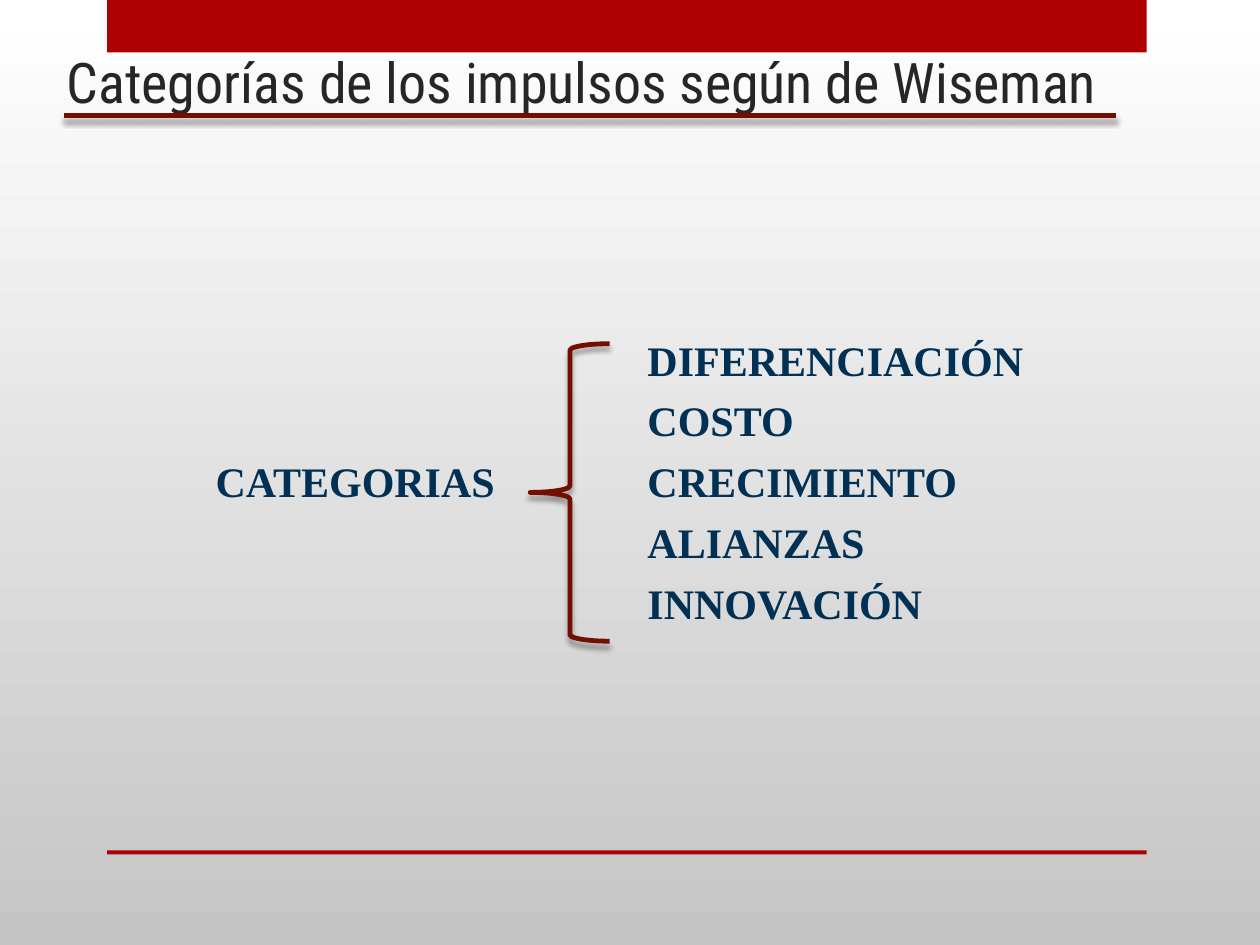
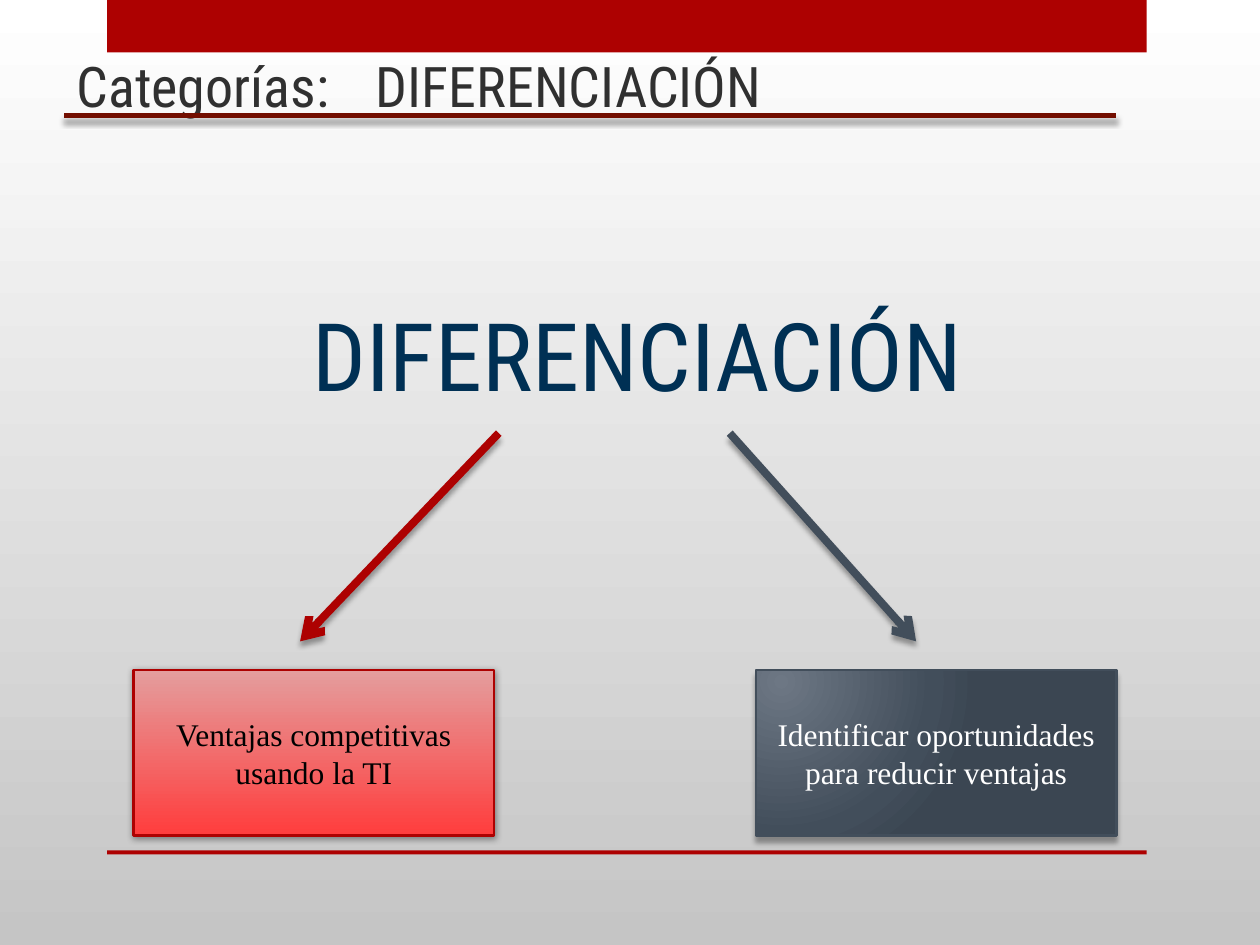
from dataclasses import dataclass

from lxml import etree
from pptx import Presentation
from pptx.dml.color import RGBColor
from pptx.enum.shapes import MSO_CONNECTOR, MSO_SHAPE
from pptx.enum.text import MSO_ANCHOR, PP_ALIGN
from pptx.oxml.ns import qn
from pptx.util import Pt

LINE = MSO_CONNECTOR.STRAIGHT
RECT = MSO_SHAPE.RECTANGLE
BRACE = MSO_SHAPE.LEFT_BRACE
LEFT, CENTER = PP_ALIGN.LEFT, PP_ALIGN.CENTER
MIDDLE, BOTTOM = MSO_ANCHOR.MIDDLE, MSO_ANCHOR.BOTTOM
PLAIN = "{2D5ABB26-0587-4C30-8999-92F81FD0307C}"


@dataclass(frozen=True)
class Theme:
    red: str = "AD0101"
    maroon: str = "730E00"
    navy: str = "003054"
    slate: str = "424E5B"
    ink: str = "262626"
    gray: str = "303030"
    black: str = "000000"
    white: str = "FFFFFF"
    paper: tuple = ((0, "FFFFFF"), (100, "C5C5C5"))
    rose: tuple = ((0, "E49D9D"), (100, "FF3D3D"))
    steel: tuple = ((0, "6D7784"), (76, "424E5B"), (100, "3B4652"))
    sans: str = "Roboto Condensed"
    serif: str = "Times New Roman"
    title: int = 32
    hero: int = 54
    item: int = 24
    body: int = 18
    thin: float = 1.25
    rule: float = 2.75
    thick: float = 4.5


T = Theme()


def pts(*sizes):
    return [Pt(size) for size in sizes]


def rgb(color):
    return RGBColor.from_string(color)


def add(parent, tag, **attrs):
    node = etree.SubElement(parent, qn(tag))
    for key, value in attrs.items():
        node.set(key, str(value))
    return node


def blend(fill, root, stops, round_=False):
    fill.gradient()
    grad = root.find(".//" + qn("a:gradFill"))
    for child in list(grad):
        grad.remove(child)
    group = add(grad, "a:gsLst")
    for place, color in stops:
        stop = add(group, "a:gs", pos=place * 1000)
        add(stop, "a:srgbClr", val=color)
    if round_:
        ring = add(grad, "a:path", path="circle")
        add(ring, "a:fillToRect", l=15000, t=15000, r=100000, b=100000)
    else:
        add(grad, "a:lin", ang=90 * 60000, scaled=0)


def shade(shape, alpha=35, blur=3, dist=3, angle=90):
    group = add(shape._element.spPr, "a:effectLst")
    glow = add(group, "a:outerShdw", blurRad=Pt(blur), dist=Pt(dist),
               dir=angle * 60000, rotWithShape=0)
    color = add(glow, "a:srgbClr", val=T.black)
    add(color, "a:alpha", val=alpha * 1000)


def stroke(shape, color, width):
    shape.line.color.rgb = rgb(color)
    shape.line.width = Pt(width)


def write(frame, text, font, size, color, align=LEFT, bold=False):
    frame.text = text
    for para in frame.paragraphs:
        para.alignment = align
        for run in para.runs:
            run.font.name = font
            run.font.size = Pt(size)
            run.font.bold = bold
            run.font.color.rgb = rgb(color)


def title(slide, text, box, size, color, align=LEFT):
    frame = slide.shapes.add_textbox(*pts(*box)).text_frame
    frame.word_wrap = True
    frame.vertical_anchor = BOTTOM
    write(frame, text, T.sans, size, color, align)
    return frame


def tab(frame, place):
    props = frame.paragraphs[0]._p.get_or_add_pPr()
    add(add(props, "a:tabLst"), "a:tab", pos=Pt(place), algn="l")


def bar(slide, top, height):
    shape = slide.shapes.add_shape(RECT, *pts(61.2, top, 594, height))
    shape.shadow.inherit = False
    shape.fill.solid()
    shape.fill.fore_color.rgb = rgb(T.red)
    shape.line.fill.background()


def line(slide, ends, color, width, arrow=False):
    link = slide.shapes.add_connector(LINE, *pts(*ends))
    stroke(link, color, width)
    if arrow:
        add(link.line._get_or_add_ln(), "a:tailEnd", type="arrow")
    shade(link)


def rule(slide):
    line(slide, (36.7, 66.2, 637.9, 66.2), T.maroon, T.rule)


def brace(slide, box):
    shape = slide.shapes.add_shape(BRACE, *pts(*box))
    shape.fill.background()
    stroke(shape, T.maroon, T.rule)
    shade(shape)


def card(slide, left, text, stops, edge, ink, round_=False, **shadow):
    shape = slide.shapes.add_shape(RECT, *pts(left, 383, 206, 94.5))
    blend(shape.fill, shape._element, stops, round_)
    stroke(shape, edge, T.thin)
    shade(shape, **shadow)
    frame = shape.text_frame
    frame.word_wrap = True
    frame.vertical_anchor = MIDDLE
    write(frame, text, T.serif, T.body, ink, CENTER)


def grid(slide, rows, left, top, width, height):
    count = len(rows)
    table = slide.shapes.add_table(
        count, 2, *pts(left, top, width * 2, height * count)).table
    table._tbl.tblPr.find(qn("a:tableStyleId")).text = PLAIN
    table.first_row = table.horz_banding = False
    for col in table.columns:
        col.width = Pt(width)
    for row, texts in zip(table.rows, rows):
        row.height = Pt(height)
        for cell, text in zip(row.cells, texts):
            cell.fill.background()
            cell.vertical_anchor = MIDDLE
            cell.margin_top = cell.margin_bottom = Pt(3)
            if text:
                write(cell.text_frame, text, T.serif, T.item, T.navy,
                      bold=True)


def page(deck):
    slide = deck.slides.add_slide(deck.slide_layouts[6])
    blend(slide.background.fill, slide._element, T.paper)
    bar(slide, 0, 30)
    bar(slide, 486, 2.2)
    return slide


def drivers(deck):
    slide = page(deck)
    title(slide, "Categorías de los impulsos según de Wiseman",
          (31, 19.5, 680, 49.5), T.title, T.ink)
    rule(slide)
    names = ("DIFERENCIACIÓN", "COSTO", "CRECIMIENTO", "ALIANZAS",
             "INNOVACIÓN")
    mid = len(names) // 2
    rows = [("CATEGORIAS" if i == mid else "", name)
            for i, name in enumerate(names)]
    grid(slide, rows, 116, 189.4, 246.8, 33.7)
    brace(slide, (303, 196.4, 45.4, 170))


def edge(deck):
    slide = page(deck)
    title(slide, "DIFERENCIACIÓN", (76.3, 147, 576, 91), T.hero, T.navy,
          CENTER)
    card(slide, 76.3, "Ventajas competitivas usando la TI", T.rose, T.red,
         T.black, alpha=40, blur=4, dist=1, angle=88)
    card(slide, 432, "Identificar oportunidades para reducir ventajas",
         T.steel, T.slate, T.white, round_=True)
    line(slide, (285, 247.5, 171.5, 366.5), T.red, T.thick, arrow=True)
    line(slide, (417, 247.5, 523.5, 366.5), T.slate, T.thick, arrow=True)
    frame = title(slide, "Categorías:\tDIFERENCIACIÓN",
                  (36.7, 21.8, 594, 49.5), T.title, T.gray)
    tab(frame, 171)
    rule(slide)


def main():
    deck = Presentation()
    deck.slide_width, deck.slide_height = pts(720, 540)
    drivers(deck)
    edge(deck)
    deck.save("out.pptx")


if __name__ == "__main__":
    main()
